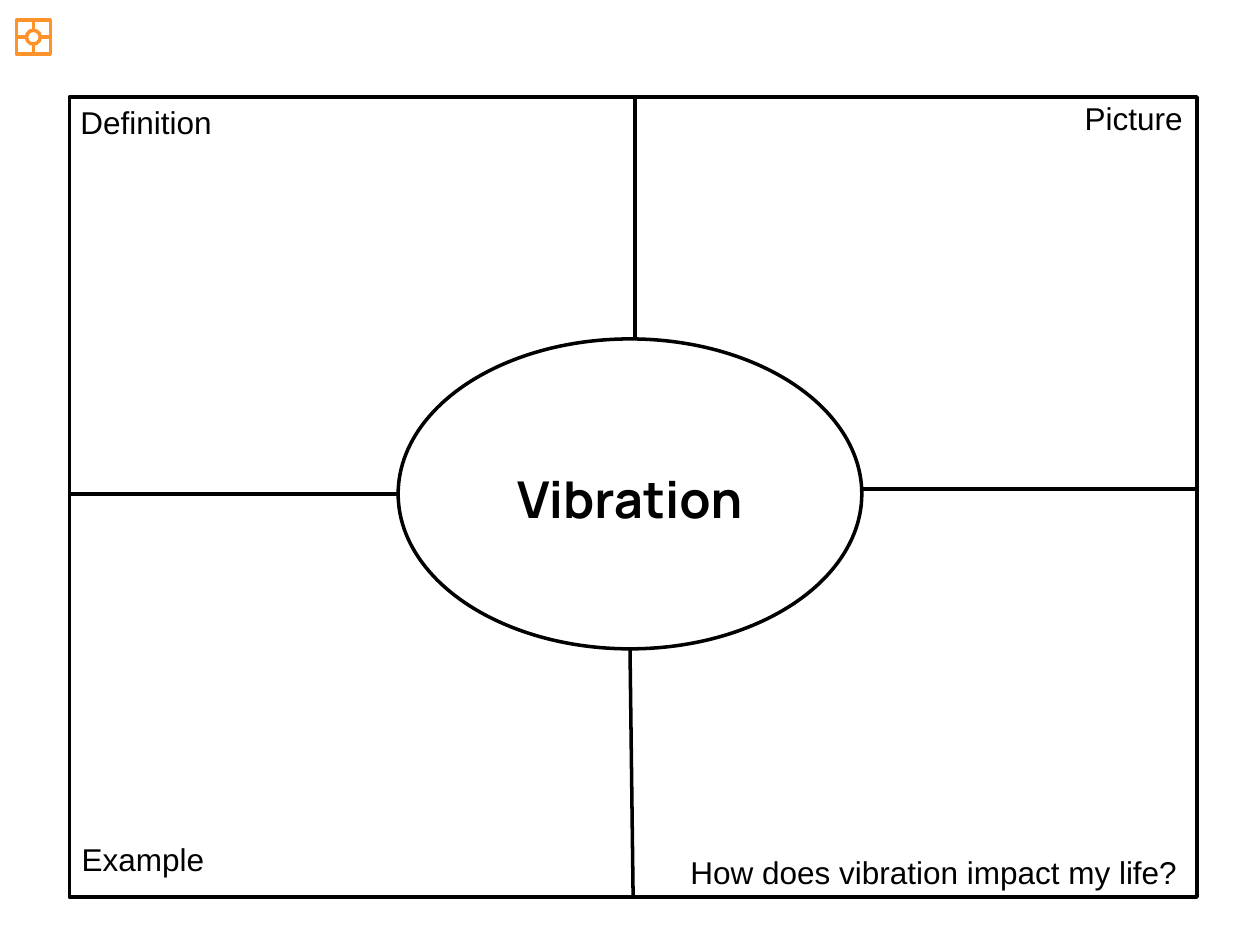
"""Build a four-part vocabulary organizer slide about vibration."""
from dataclasses import dataclass
from typing import Optional

import pptx
import pptx.dml.color
import pptx.enum.shapes
import pptx.enum.text
import pptx.oxml
import pptx.oxml.ns
import pptx.util
from pptx.util import Inches

BLACK = pptx.dml.color.RGBColor(0x00, 0x00, 0x00)
WHITE = pptx.dml.color.RGBColor(0xFF, 0xFF, 0xFF)
ORANGE = pptx.dml.color.RGBColor(0xFF, 0x93, 0x2B)
Align = pptx.enum.text.PP_ALIGN
Shape = pptx.enum.shapes.MSO_SHAPE
TOP, LEFT, BOTTOM, RIGHT = range(4)


@dataclass
class Area:
    left: float
    top: float
    width: float
    height: float

    def inches(self) -> list:
        return [Inches(n) for n in (self.left, self.top, self.width, self.height)]


@dataclass
class Divider:
    inner: tuple[float, float]
    outer: tuple[float, float]
    frame_side: Optional[int] = None


@dataclass
class Organizer:
    frame: Area
    center: Area
    dividers: list[Divider]
    color: pptx.dml.color.RGBColor


@dataclass
class Label:
    text: str
    area: Area
    align: Align = Align.LEFT
    size: int = 18
    font: str = "Arial"
    bold: bool = False


MAIN = Organizer(
    Area(0.55, 0.77, 8.95, 6.35),
    Area(3.16, 2.69, 3.68, 2.46),
    [
        Divider((5.04, 2.69), (5.04, 0.77)),
        Divider((5, 5.15), (5.02, 7.12), BOTTOM),
        Divider((3.16, 3.92), (0.55, 3.92)),
        Divider((6.84, 3.88), (9.5, 3.88)),
    ],
    BLACK,
)
ICON = Organizer(
    Area(0.13, 0.16, 0.27, 0.27),
    Area(0.21, 0.24, 0.11, 0.11),
    [
        Divider((0.265, 0.24), (0.265, 0.16), TOP),
        Divider((0.265, 0.35), (0.265, 0.43), BOTTOM),
        Divider((0.21, 0.295), (0.13, 0.295), LEFT),
        Divider((0.32, 0.295), (0.4, 0.295), RIGHT),
    ],
    ORANGE,
)
LABELS = [
    Label("Vibration", Area(3.27, 3.66, 3.46, 0.59), Align.CENTER, 29, "Manrope", True),
    Label("Definition", Area(0.54, 0.77, 1.25, 0.4)),
    Label("Example", Area(0.55, 6.62, 1.18, 0.4)),
    Label("Picture", Area(8.51, 0.74, 0.99, 0.4)),
    Label("How does vibration impact my life?", Area(4.95, 6.72, 4.49, 0.4), Align.RIGHT),
]


def set_line(item, color: pptx.dml.color.RGBColor) -> None:
    item.line.color.rgb = color
    item.line.width = pptx.util.Pt(2)


def add_outline(page, kind: Shape, area: Area, color: pptx.dml.color.RGBColor):
    shape = page.shapes.add_shape(kind, *area.inches())
    shape.shadow.inherit = False
    set_line(shape, color)
    return shape


def draw_organizer(page, organizer: Organizer) -> None:
    frame = add_outline(page, Shape.RECTANGLE, organizer.frame, organizer.color)
    frame.fill.background()
    for divider in organizer.dividers:
        line = page.shapes.add_connector(
            pptx.enum.shapes.MSO_CONNECTOR.STRAIGHT,
            *[Inches(n) for n in divider.inner + divider.outer],
        )
        set_line(line, organizer.color)
        properties = line._element.spPr
        properties.append(pptx.oxml.parse_xml(
            f"<a:effectLst {pptx.oxml.ns.nsdecls('a')}/>"))
        if divider.frame_side is not None:
            line.end_connect(frame, divider.frame_side)
    center = add_outline(page, Shape.OVAL, organizer.center, organizer.color)
    center.fill.solid()
    center.fill.fore_color.rgb = WHITE


def draw_label(page, label: Label) -> None:
    box = page.shapes.add_textbox(*label.area.inches())
    box.text_frame.word_wrap = True
    box.text_frame.auto_size = pptx.enum.text.MSO_AUTO_SIZE.SHAPE_TO_FIT_TEXT
    para = box.text_frame.paragraphs[0]
    para.alignment = label.align
    span = para.add_run()
    span.text = label.text
    span.font.name = label.font
    span.font.size = pptx.util.Pt(label.size)
    span.font.bold = label.bold
    span.font.color.rgb = BLACK


def main() -> None:
    deck = pptx.Presentation()
    deck.slide_width, deck.slide_height = Inches(10), Inches(7.5)
    page = deck.slides.add_slide(deck.slide_layouts[6])
    draw_organizer(page, MAIN)
    for label in LABELS:
        draw_label(page, label)
    draw_organizer(page, ICON)
    deck.save("out.pptx")


if __name__ == "__main__":
    main()
